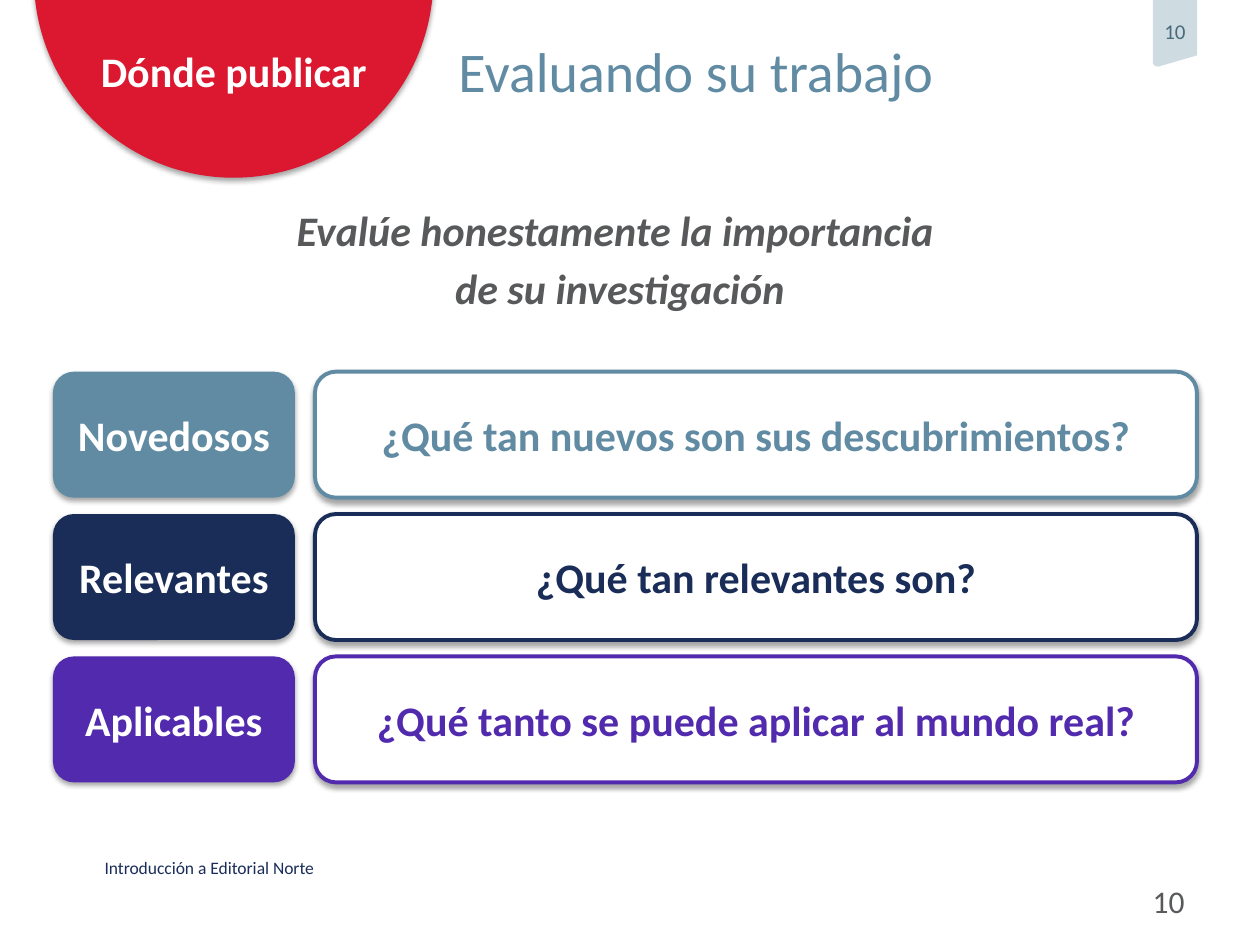
"""Build the slide on judging how new, relevant and applicable a piece of research is."""
import pptx
import pptx.util
import pptx.dml.color
import pptx.enum.shapes
import pptx.enum.text
import pptx.oxml

Inches, Pt = pptx.util.Inches, pptx.util.Pt
Shape = pptx.enum.shapes.MSO_SHAPE
Align = pptx.enum.text.PP_ALIGN
Anchor = pptx.enum.text.MSO_ANCHOR

THEME = {
    "font": "Calibri",
    "white": "FFFFFF", "steel": "608BA3", "navy": "1A2D59", "violet": "512AAD",
    "red": "DB1830", "grey": "58595B", "tag": "CEDBE0", "tag_text": "486A7E",
    "title": 32, "body": 24, "number": 18, "tag_size": 12, "footer": 10,
    "border": 2.25,
}

SECTION = "Dónde publicar"
TITLE = "Evaluando su trabajo"
ADVICE = ["Evalúe honestamente la importancia ", "de su investigación"]
CRITERIA = [
    ("Novedosos", "¿Qué tan nuevos son sus descubrimientos?", "steel"),
    ("Relevantes", "¿Qué tan relevantes son?", "navy"),
    ("Aplicables", "¿Qué tanto se puede aplicar al mundo real?", "violet"),
]
FOOTER = "Introducción a Editorial Norte"
NUMBER = "10"

WIDTH, HEIGHT = 10, 7.5
RIGHT = 0.95 * WIDTH
LABEL_LEFT, LABEL_WIDTH = 0.42, 1.92
QUESTION_LEFT = 0.25 * WIDTH
ROW_TOP, ROW_HEIGHT, ROW_STEP = 2.95, 1, 1.13
TAG_POINTS = [(9.15, 0), (9.5, 0), (9.5, 0.44), (9.19, 0.53), (9.16, 0.52), (9.15, 0.5)]


def color(name):
    return pptx.dml.color.RGBColor.from_string(THEME[name])


def write(shape, lines, size, ink, align=Align.LEFT, anchor=Anchor.TOP,
          insets=(0.1, 0.05, 0.1, 0.05), wrap=True, bold=False, italic=False, gap=0):
    frame = shape.text_frame
    frame.word_wrap = wrap
    frame.vertical_anchor = anchor
    (frame.margin_left, frame.margin_top,
     frame.margin_right, frame.margin_bottom) = map(Inches, insets)
    for index, line in enumerate(lines):
        paragraph = frame.add_paragraph() if index else frame.paragraphs[0]
        paragraph.alignment = align
        if index:
            paragraph.space_before = Pt(gap)
        run = paragraph.add_run()
        run.text = line
        run.font.name = THEME["font"]
        run.font.size = Pt(THEME[size])
        run.font.bold, run.font.italic = bold, italic
        run.font.color.rgb = color(ink)


def add_text(slide, box, lines, size, ink, **style):
    write(slide.shapes.add_textbox(*map(Inches, box)), lines, size, ink, **style)


def paint(shape, fill, border=None):
    shape.shadow.inherit = False
    shape.fill.solid()
    shape.fill.fore_color.rgb = color(fill)
    if border:
        shape.line.color.rgb = color(border)
        shape.line.width = Pt(THEME["border"])
    else:
        shape.line.fill.background()


def add_shadow(shape):
    effects = shape._element.spPr.find(pptx.oxml.ns.qn("a:effectLst"))
    effects.append(pptx.oxml.parse_xml(
        f'<a:outerShdw {pptx.oxml.ns.nsdecls("a")} blurRad="{Pt(3.1)}" dist="{Pt(1.8)}" '
        'dir="5400000" rotWithShape="0"><a:srgbClr val="000000">'
        '<a:alpha val="35000"/></a:srgbClr></a:outerShdw>'))


def add_shadowed(slide, kind, box, fill, border=None):
    shape = slide.shapes.add_shape(kind, *map(Inches, box))
    paint(shape, fill, border)
    add_shadow(shape)
    return shape


def add_page_tag(slide):
    points = [(Inches(x), Inches(y)) for x, y in TAG_POINTS]
    builder = slide.shapes.build_freeform(*points[0])
    builder.add_line_segments(points[1:], close=True)
    tag = builder.convert_to_shape()
    paint(tag, "tag")
    write(tag, [NUMBER], "tag_size", "tag_text", align=Align.CENTER,
          anchor=Anchor.MIDDLE, insets=(0, 0, 0, 0.04), wrap=False)


def add_criteria(slide):
    for row, (label, question, tint) in enumerate(CRITERIA):
        top = ROW_TOP + row * ROW_STEP
        cells = [
            (QUESTION_LEFT, RIGHT - QUESTION_LEFT, question, "white", tint, tint),
            (LABEL_LEFT, LABEL_WIDTH, label, tint, None, "white"),
        ]
        for left, width, text, fill, border, ink in cells:
            cell = add_shadowed(slide, Shape.ROUNDED_RECTANGLE,
                                (left, top, width, ROW_HEIGHT), fill, border)
            write(cell, [text], "body", ink, align=Align.CENTER,
                  anchor=Anchor.MIDDLE, bold=True)


def main():
    presentation = pptx.Presentation()
    presentation.slide_width, presentation.slide_height = Inches(WIDTH), Inches(HEIGHT)
    slide = presentation.slides.add_slide(presentation.slide_layouts[6])
    add_text(slide, (0.83, 6.8, 3.55, 0.17), [FOOTER], "footer", "navy",
             anchor=Anchor.MIDDLE, insets=(0, 0, 0, 0))
    add_page_tag(slide)
    badge = add_shadowed(slide, Shape.CHORD, (0.27, -1.76, 3.17, 3.17), "red")
    badge.rotation = 292
    add_text(slide, (0.51, 0.31, 2.69, 0.5), [SECTION], "body", "white",
             align=Align.CENTER, bold=True)
    add_text(slide, (7.17, 6.95, RIGHT - 7.17, 0.4), [NUMBER], "number", "grey",
             align=Align.RIGHT)
    add_text(slide, (3.54, 0.29, 6.42, 0.93), [TITLE], "title", "steel",
             insets=(0.1, 0, 0, 0))
    add_criteria(slide)
    add_text(slide, (0.83, 1.57, 8.18, 1.25), ADVICE, "body", "grey",
             align=Align.CENTER, bold=True, italic=True, gap=4.8)
    presentation.save("out.pptx")


if __name__ == "__main__":
    main()
